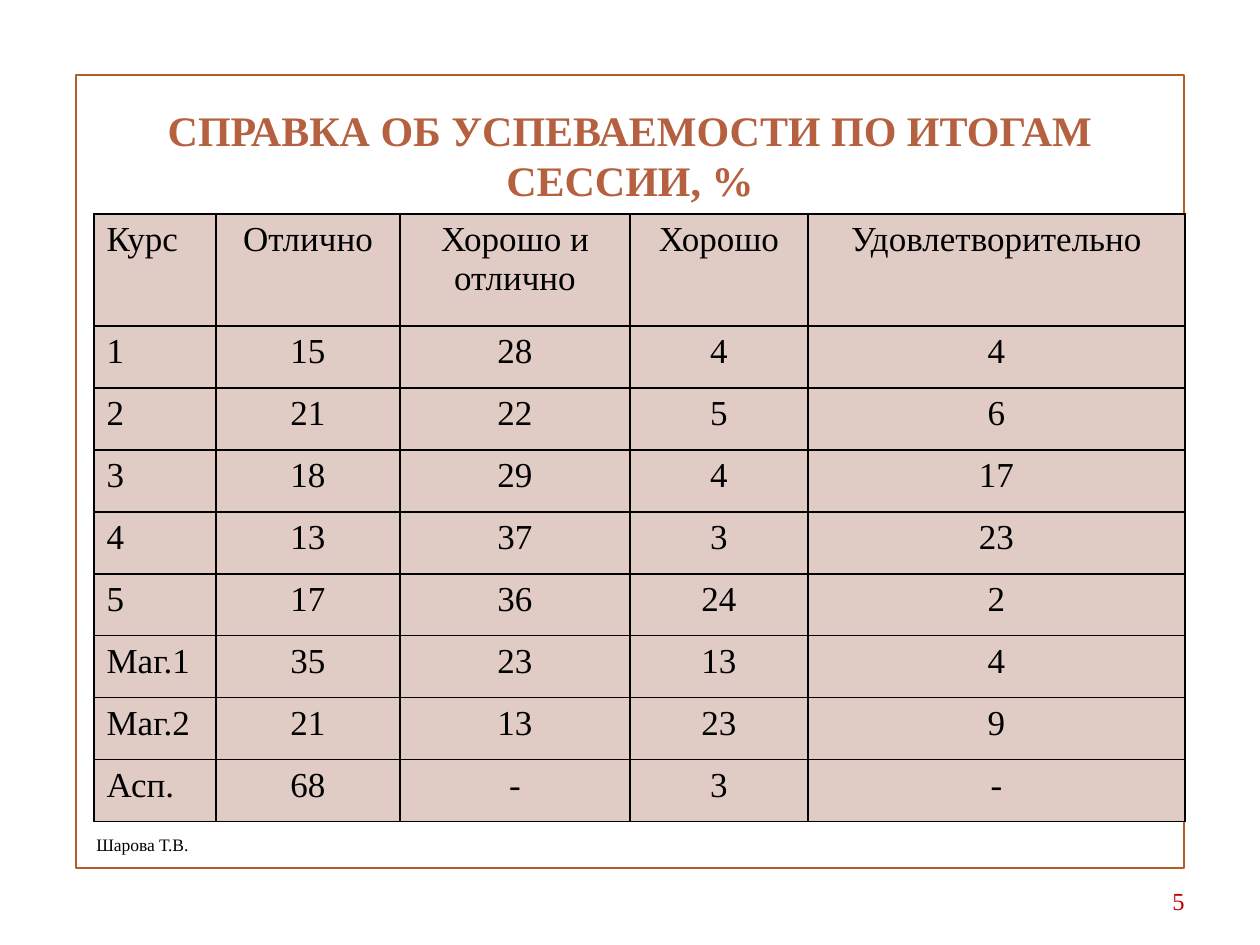
from dataclasses import dataclass

import lxml.etree
import pptx
import pptx.dml.color
import pptx.enum.shapes
import pptx.enum.text
import pptx.oxml.ns
import pptx.util

Align = pptx.enum.text.PP_ALIGN
Anchor = pptx.enum.text.MSO_ANCHOR
EMU_PER_PX = 914400 / 126


@dataclass(frozen=True)
class Theme:
    font: str = "Times New Roman"
    title_color: str = "B5603F"
    frame_color: str = "B15E28"
    cell_color: str = "E0CCC5"
    text_color: str = "000000"
    number_color: str = "C00000"
    title_size: int = 24
    table_size: int = 20
    number_size: int = 14
    author_size: int = 10
    frame_width: float = 1.25
    border_width: int = 1


THEME = Theme()

COLUMN_WIDTHS = [122, 184, 230, 178, 377]
HEADER_HEIGHT = 112
ROW_HEIGHT = 62
GRADES = [
    ["Курс", "Отлично", "Хорошо и отлично", "Хорошо", "Удовлетворительно"],
    ["1", "15", "28", "4", "4"],
    ["2", "21", "22", "5", "6"],
    ["3", "18", "29", "4", "17"],
    ["4", "13", "37", "3", "23"],
    ["5", "17", "36", "24", "2"],
    ["Маг.1", "35", "23", "13", "4"],
    ["Маг.2", "21", "13", "23", "9"],
    ["Асп.", "68", "-", "3", "-"],
]


def px(length):
    return pptx.util.Emu(round(length * EMU_PER_PX))


def rgb(color):
    return pptx.dml.color.RGBColor.from_string(color)


def write_text(text_frame, text, size, color, align, bold=False):
    text_frame.text = text
    paragraph = text_frame.paragraphs[0]
    paragraph.alignment = align
    for run in paragraph.runs:
        run.font.name = THEME.font
        run.font.size = pptx.util.Pt(size)
        run.font.bold = bold
        run.font.color.rgb = rgb(color)


def add_text(slide, box, text, size, color, align, bold=False):
    shape = slide.shapes.add_textbox(*map(px, box))
    shape.text_frame.word_wrap = True
    shape.text_frame.vertical_anchor = Anchor.MIDDLE
    write_text(shape.text_frame, text, size, color, align, bold)


def add_frame(slide, box):
    shape = slide.shapes.add_shape(pptx.enum.shapes.MSO_SHAPE.RECTANGLE, *map(px, box))
    shape.shadow.inherit = False
    shape.fill.background()
    shape.line.color.rgb = rgb(THEME.frame_color)
    shape.line.width = pptx.util.Pt(THEME.frame_width)


def add_borders(cell):
    qn = pptx.oxml.ns.qn
    properties = cell._tc.get_or_add_tcPr()
    for position, side in enumerate(("a:lnL", "a:lnR", "a:lnT", "a:lnB")):
        line = lxml.etree.Element(qn(side), w=str(pptx.util.Pt(THEME.border_width)))
        fill = lxml.etree.SubElement(line, qn("a:solidFill"))
        lxml.etree.SubElement(fill, qn("a:srgbClr"), val=THEME.text_color)
        properties.insert(position, line)


def add_grades_table(slide, left, top):
    heights = [HEADER_HEIGHT] + [ROW_HEIGHT] * (len(GRADES) - 1)
    box = (left, top, sum(COLUMN_WIDTHS), sum(heights))
    table = slide.shapes.add_table(len(GRADES), len(COLUMN_WIDTHS), *map(px, box)).table
    for column, width in zip(table.columns, COLUMN_WIDTHS):
        column.width = px(width)
    for row, height, values in zip(table.rows, heights, GRADES):
        row.height = px(height)
        for index, (cell, value) in enumerate(zip(row.cells, values)):
            cell.fill.solid()
            cell.fill.fore_color.rgb = rgb(THEME.cell_color)
            add_borders(cell)
            align = Align.CENTER if index else Align.LEFT
            write_text(cell.text_frame, value, THEME.table_size, THEME.text_color, align)


def main():
    presentation = pptx.Presentation()
    presentation.slide_width = px(1260)
    presentation.slide_height = px(945)
    slide = presentation.slides.add_slide(presentation.slide_layouts[6])
    add_frame(slide, (76, 75, 1108, 793))
    add_text(slide, (63, 86, 1134, 137), "СПРАВКА ОБ УСПЕВАЕМОСТИ ПО ИТОГАМ СЕССИИ, %",
             THEME.title_size, THEME.title_color, Align.CENTER, bold=True)
    add_grades_table(slide, 94, 214)
    add_text(slide, (903, 876, 294, 50), "5",
             THEME.number_size, THEME.number_color, Align.RIGHT)
    add_text(slide, (84, 820, 400, 50), "Шарова Т.В.",
             THEME.author_size, THEME.text_color, Align.LEFT)
    presentation.save("out.pptx")


if __name__ == "__main__":
    main()
